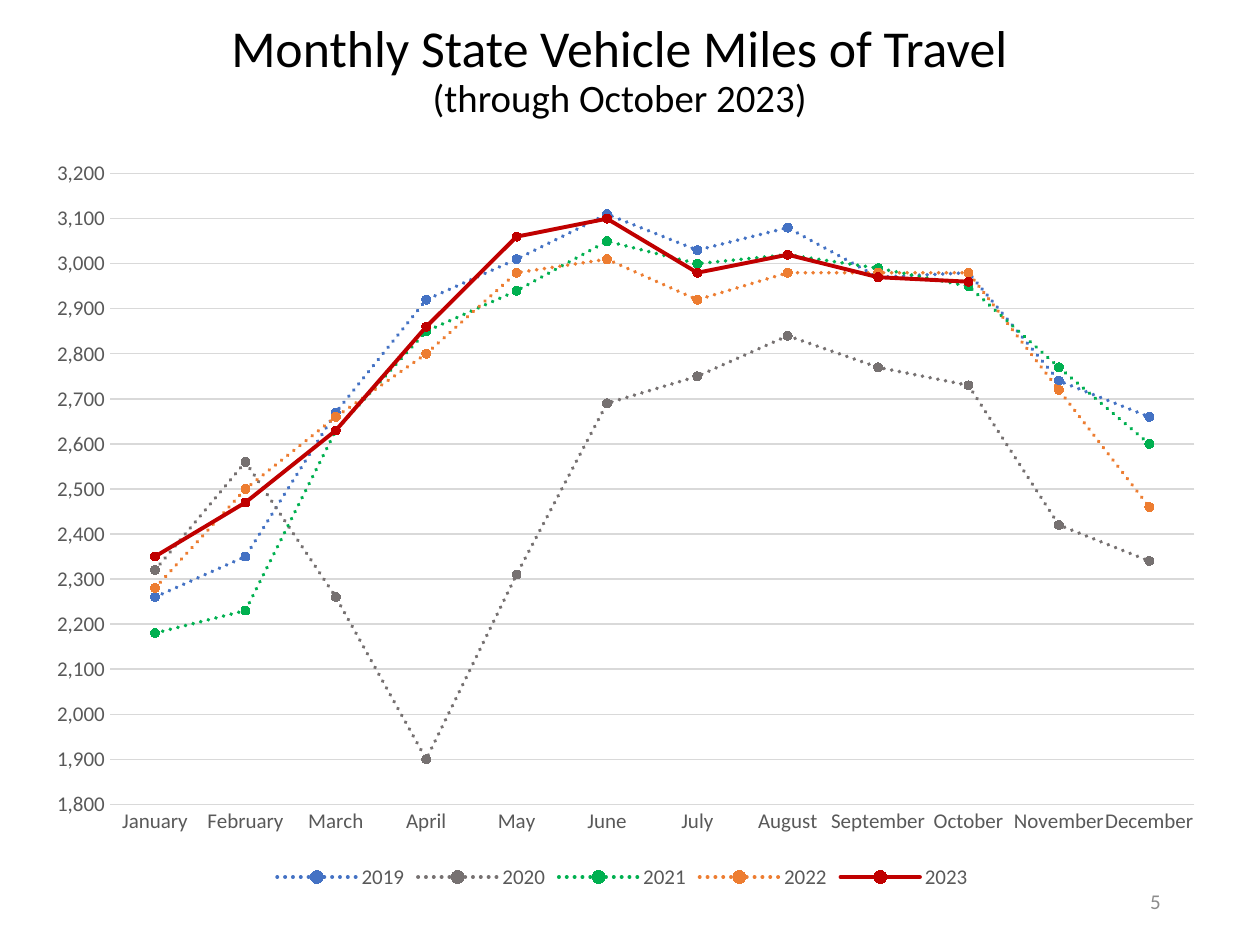
from dataclasses import dataclass

from lxml import etree
from pptx import Presentation
from pptx.chart.data import CategoryChartData
from pptx.dml.color import RGBColor
from pptx.enum import chart as ch, dml, text
from pptx.oxml import ns
from pptx.util import Inches, Pt


@dataclass(frozen=True)
class Theme:
    font: str = "Calibri"
    ink: str = "000000"
    label: str = "595959"
    grid: str = "D9D9D9"
    page: str = "8C8C8C"
    head: float = 29.6
    sub: float = 22.2
    small: float = 12


T = Theme()

MONTHS = ["January", "February", "March", "April", "May", "June", "July",
          "August", "September", "October", "November", "December"]

# Year: line colour, monthly miles
YEARS = {
    "2019": ("4472C4", [2260, 2350, 2670, 2920, 3010, 3110,
                        3030, 3080, 2970, 2980, 2740, 2660]),
    "2020": ("767171", [2320, 2560, 2260, 1900, 2310, 2690,
                        2750, 2840, 2770, 2730, 2420, 2340]),
    "2021": ("00B050", [2180, 2230, 2630, 2850, 2940, 3050,
                        3000, 3020, 2990, 2950, 2770, 2600]),
    "2022": ("ED7D31", [2280, 2500, 2660, 2800, 2980, 3010,
                        2920, 2980, 2980, 2980, 2720, 2460]),
    "2023": ("C00000", [2350, 2470, 2630, 2860, 3060, 3100,
                        2980, 3020, 2970, 2960, None, None]),
}
LATEST = "2023"


def style(font, size, color):
    font.name = T.font
    font.size = Pt(size)
    font.color.rgb = RGBColor.from_string(color)


def stroke(line, color, width):
    line.color.rgb = RGBColor.from_string(color)
    line.width = Pt(width)


def place(shape, x, y, w, h):
    shape.left, shape.top = Inches(x), Inches(y)
    shape.width, shape.height = Inches(w), Inches(h)


def add_run(para, words, size, color):
    run = para.add_run()
    run.text = words
    style(run.font, size, color)


def set_title(slide):
    title = slide.shapes.title
    place(title, 0.61, 0.08, 8.62, 0.93)
    frame = title.text_frame
    frame.auto_size = text.MSO_AUTO_SIZE.NONE
    frame.vertical_anchor = text.MSO_ANCHOR.BOTTOM
    lines = [("Monthly State Vehicle Miles of Travel", T.head),
             ("(through October 2023)", T.sub)]
    for i, (words, size) in enumerate(lines):
        para = frame.add_paragraph() if i else frame.paragraphs[0]
        para.alignment = text.PP_ALIGN.CENTER
        para.line_spacing = 0.9
        para.space_before = Pt(0)
        add_run(para, words, size, T.ink)


def add_page(slide, number):
    box = slide.shapes.add_textbox(
        Inches(7.06), Inches(6.95), Inches(2.25), Inches(0.4))
    frame = box.text_frame
    frame.word_wrap = True
    frame.vertical_anchor = text.MSO_ANCHOR.MIDDLE
    para = frame.paragraphs[0]
    para.alignment = text.PP_ALIGN.RIGHT
    add_run(para, number, T.small, T.page)


def set_plot(chart, x, y, w, h):
    """Fix the inner plot area, in fractions of the chart."""
    area = chart._chartSpace.chart.plotArea
    for old in area.findall(ns.qn("c:layout")):
        area.remove(old)
    layout = etree.Element(ns.qn("c:layout"))
    manual = etree.SubElement(layout, ns.qn("c:manualLayout"))
    parts = [("layoutTarget", "inner"), ("xMode", "edge"), ("yMode", "edge"),
             ("x", x), ("y", y), ("w", w), ("h", h)]
    for tag, val in parts:
        etree.SubElement(manual, ns.qn(f"c:{tag}")).set("val", str(val))
    area.insert(0, layout)


def style_axes(chart):
    months, miles = chart.category_axis, chart.value_axis
    for axis in (months, miles):
        axis.major_tick_mark = axis.minor_tick_mark = ch.XL_TICK_MARK.NONE
        style(axis.tick_labels.font, T.small, T.label)
    stroke(months.format.line, T.grid, 0.75)
    # Automatic label angle
    body = months._element.find(f"{ns.qn('c:txPr')}/{ns.qn('a:bodyPr')}")
    body.set("rot", "-60000000")

    miles.minimum_scale, miles.maximum_scale = 1800, 3200
    miles.major_unit = 100
    miles.tick_labels.number_format = "#,##0"
    miles.tick_labels.number_format_is_linked = False
    miles.format.line.fill.background()
    miles.has_major_gridlines = True
    stroke(miles.major_gridlines.format.line, T.grid, 0.75)


def style_year(year):
    color = YEARS[year.name][0]
    year.smooth = False
    line = year.format.line
    stroke(line, color, 2.25)
    if year.name != LATEST:
        line.dash_style = dml.MSO_LINE.ROUND_DOT
    year._element.xpath("c:spPr/a:ln")[0].set("cap", "rnd")
    mark = year.marker
    mark.style = ch.XL_MARKER_STYLE.CIRCLE
    mark.size = 5
    mark.format.fill.solid()
    mark.format.fill.fore_color.rgb = RGBColor.from_string(color)
    stroke(mark.format.line, color, 0.75)


def add_miles(slide):
    data = CategoryChartData(number_format="#,##0")
    data.categories = MONTHS
    for name, (_, miles) in YEARS.items():
        data.add_series(name, miles)
    chart = slide.shapes.add_chart(
        ch.XL_CHART_TYPE.LINE_MARKERS, Inches(0.21), Inches(1.14),
        Inches(9.46), Inches(5.96), data).chart
    style(chart.font, 10, T.ink)
    chart.has_title = False
    chart.has_legend = True
    chart.legend.position = ch.XL_LEGEND_POSITION.BOTTOM
    chart.legend.include_in_layout = False
    style(chart.legend.font, T.small, T.label)
    plot = chart.plots[0]
    plot.vary_by_categories = False
    for year in plot.series:
        style_year(year)
    style_axes(chart)
    set_plot(chart, 0.07, 0.04, 0.91, 0.84)


def main():
    deck = Presentation()
    deck.slide_width, deck.slide_height = Inches(10), Inches(7.5)
    slide = deck.slides.add_slide(deck.slide_layouts[5])
    # Chart, page number, heading
    add_miles(slide)
    add_page(slide, "5")
    set_title(slide)
    deck.save("out.pptx")


if __name__ == "__main__":
    main()
